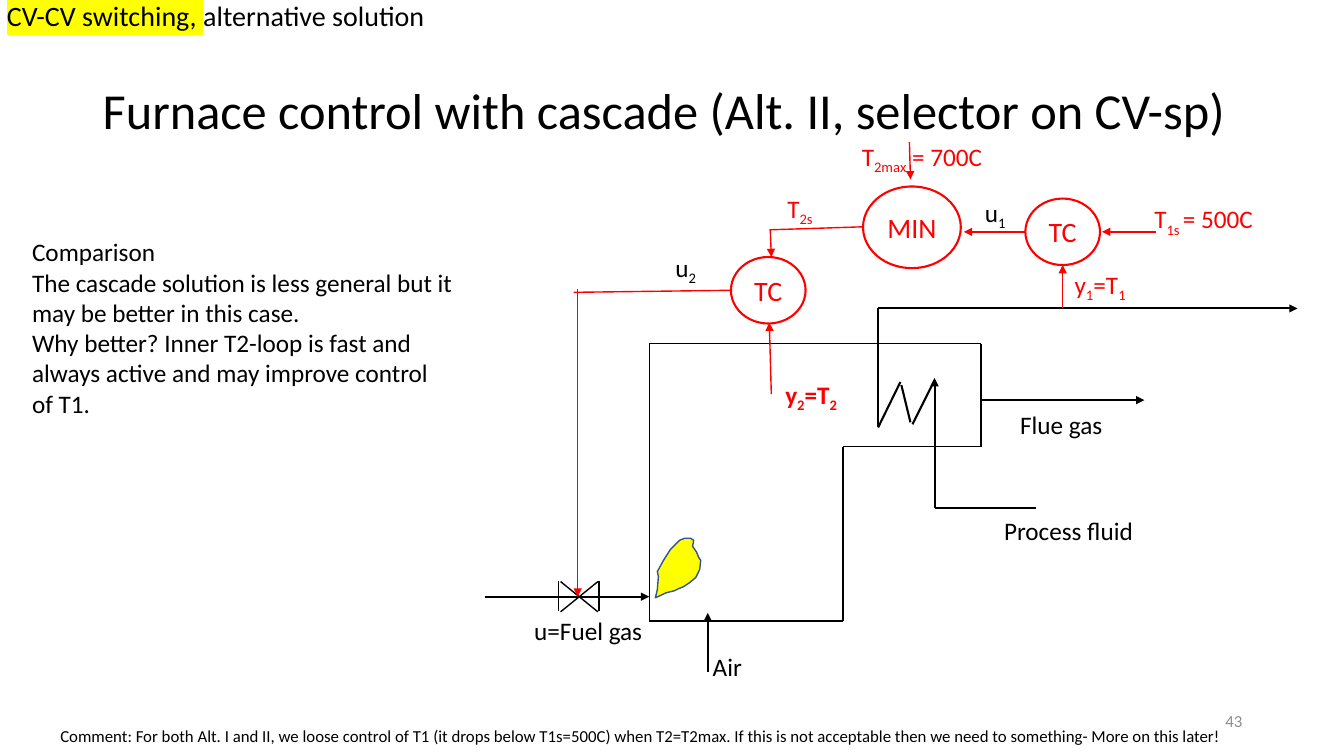
from lxml import etree
from pptx import Presentation
from pptx.dml.color import RGBColor
from pptx.enum.shapes import MSO_CONNECTOR, MSO_SHAPE
from pptx.enum.text import MSO_ANCHOR as ANCHOR, PP_ALIGN as ALIGN
from pptx.oxml.ns import qn
from pptx.util import Inches, Pt

BLACK = RGBColor(0x00, 0x00, 0x00)
WHITE = RGBColor(0xFF, 0xFF, 0xFF)
RED = RGBColor(0xFF, 0x00, 0x00)
GREY = RGBColor(0x8C, 0x8C, 0x8C)
YELLOW = RGBColor(0xFF, 0xFF, 0x00)
FLAME_EDGE = RGBColor(0x32, 0x54, 0x91)

FURNACE = [
    (6.44, 3.41, 9.73, 3.41), (9.73, 3.41, 9.73, 4.43), (8.36, 4.43, 9.73, 4.43),
    (8.36, 4.43, 8.36, 6.16), (6.44, 6.16, 8.36, 6.16), (6.44, 3.41, 6.44, 6.16),
]
VALVE = [
    (5.56, 5.77, 5.93, 6.07), (5.93, 5.77, 5.56, 6.07),
    (5.94, 5.76, 5.94, 6.06), (5.54, 5.76, 5.54, 6.06),
]
COIL = [
    (9.27, 5.04, 10.28, 5.04), (8.71, 4.24, 8.71, 3.06), (9.05, 4.21, 9.27, 3.77),
    (9.03, 4.19, 8.94, 3.82), (8.71, 4.24, 8.93, 3.79),
]
FLOWS = [
    (4.81, 5.92, 6.44, 5.92), (9.73, 3.97, 11.35, 3.97), (9.27, 5.04, 9.27, 3.75),
    (8.71, 3.06, 12.87, 3.06), (7.02, 6.67, 7.02, 6.08),
]
SIGNALS = [(5.69, 2.9, 7.25, 2.88), (7.63, 2.28, 8.56, 2.25)]
SIGNAL_ARROWS = [
    (10.54, 3.06, 10.54, 2.63), (5.73, 2.87, 5.73, 5.92), (11.47, 2.3, 10.93, 2.3),
    (7.65, 3.91, 7.63, 3.2), (7.64, 2.28, 7.65, 2.55), (9.02, 1.41, 9.03, 1.78),
    (10.17, 2.3, 9.56, 2.3),
]
CONTROLLERS = [
    ("TC", 10.17, 1.97, 0.74, 0.66), ("TC", 7.25, 2.55, 0.74, 0.66),
    ("MIN", 8.56, 1.85, 0.97, 0.81),
]
FLAME = [
    (6.5, 5.93), (6.61, 5.88), (6.69, 5.86), (6.73, 5.84), (6.78, 5.82), (6.84, 5.78),
    (6.9, 5.73), (6.94, 5.65), (6.95, 5.56), (6.93, 5.53), (6.91, 5.48), (6.89, 5.45),
    (6.87, 5.42), (6.88, 5.36), (6.85, 5.34), (6.79, 5.34), (6.74, 5.36), (6.65, 5.45),
    (6.58, 5.56), (6.52, 5.67), (6.53, 5.72), (6.52, 5.85),
]
LABELS = [
    (["u=Fuel gas"], 5.2, 6.06, 1.29, BLACK, False),
    (["Flue gas"], 10.02, 4.01, 1.03, BLACK, False),
    (["Process fluid"], 9.86, 5.06, 1.5, BLACK, False),
    (["Air"], 6.97, 6.41, 0.49, BLACK, False),
    (["u", "1"], 9.67, 1.91, 0.42, BLACK, False),
    (["u", "2"], 6.6, 2.45, 0.42, BLACK, False),
    (["T", "1s ", "= 500C"], 11.35, 1.97, 1.22, RED, False),
    (["T", "2max", " = 700C"], 8.45, 1.35, 1.46, RED, False),
    (["T", "2s"], 7.71, 1.87, 0.48, RED, False),
    (["y", "1", "=T", "1"], 10.56, 2.62, 0.74, RED, False),
    (["y", "2", "=T", "2"], 7.69, 3.71, 0.74, RED, True),
]


class Diagram:
    """Draws the elements of a control diagram on one slide in a shared style."""

    def __init__(self, slide, font="Calibri"):
        self.shapes = slide.shapes
        self.font = font

    def style(self, r, size, color, bold=False):
        r.font.name, r.font.size, r.font.bold = self.font, Pt(size), bold
        r.font.color.rgb = color

    def text(self, text, x, y, w, h, size, color=BLACK, wrap=False,
             anchor=ANCHOR.TOP, align=ALIGN.LEFT, spacing=None):
        tf = self.shapes.add_textbox(Inches(x), Inches(y), Inches(w), Inches(h)).text_frame
        tf.word_wrap, tf.vertical_anchor = wrap, anchor
        tf.text = text
        for p in tf.paragraphs:
            p.alignment, p.line_spacing = align, spacing
            for r in p.runs:
                self.style(r, size, color)
        return tf

    def label(self, parts, x, y, w, color, bold):
        p = self.text("", x, y, w, 0.4, 18).paragraphs[0]
        for i, part in enumerate(parts):
            r = p.add_run()
            r.text = part
            self.style(r, 18, color, bold)
            if i % 2:
                r._r.get_or_add_rPr().set("baseline", "-25000")

    def tag(self, marked, rest, x, y, w, h):
        p = self.text(marked, x, y, w, h, 20).paragraphs[0]
        fill = p.runs[0]._r.get_or_add_rPr().find(qn("a:solidFill"))
        highlight = etree.Element(qn("a:highlight"))
        etree.SubElement(highlight, qn("a:srgbClr"), val=str(YELLOW))
        fill.addnext(highlight)
        r = p.add_run()
        r.text = rest
        self.style(r, 20, BLACK)

    def lines(self, segments, color, width, arrow=False):
        for segment in segments:
            c = self.shapes.add_connector(MSO_CONNECTOR.STRAIGHT, *map(Inches, segment))
            c.line.color.rgb, c.line.width = color, Pt(width)
            if arrow:
                etree.SubElement(c.line._get_or_add_ln(), qn("a:tailEnd"), type="triangle")
            etree.SubElement(c._element.spPr, qn("a:effectLst"))

    def outline(self, sp, fill, line, width):
        sp.shadow.inherit = False
        sp.fill.solid()
        sp.fill.fore_color.rgb = fill
        sp.line.color.rgb, sp.line.width = line, Pt(width)

    def controller(self, name, x, y, w, h):
        sp = self.shapes.add_shape(MSO_SHAPE.FLOWCHART_CONNECTOR,
                                   Inches(x), Inches(y), Inches(w), Inches(h))
        self.outline(sp, WHITE, RED, 1.5)
        tf = sp.text_frame
        tf.word_wrap, tf.vertical_anchor = False, ANCHOR.MIDDLE
        tf.text = name
        p = tf.paragraphs[0]
        p.alignment = ALIGN.CENTER
        self.style(p.runs[0], 20, RED)

    def flame(self, points):
        start, *rest = [(Inches(x), Inches(y)) for x, y in points]
        builder = self.shapes.build_freeform(*start)
        builder.add_line_segments(rest, close=True)
        self.outline(builder.convert_to_shape(), YELLOW, FLAME_EDGE, 1)


def main():
    prs = Presentation()
    prs.slide_width, prs.slide_height = Inches(13.33), Inches(7.5)
    s = prs.slides.add_slide(prs.slide_layouts[6])
    d = Diagram(s)
    d.text("Furnace control with cascade (Alt. II, selector on CV-sp)",
           0.92, 0.4, 11.5, 1.45, 36, wrap=True, anchor=ANCHOR.MIDDLE, spacing=0.9)
    d.lines(FURNACE + VALVE, BLACK, 1)
    d.flame(FLAME)
    d.lines(COIL, BLACK, 1.5)
    d.lines(FLOWS, BLACK, 1.5, arrow=True)
    d.lines(SIGNALS, RED, 1)
    d.lines(SIGNAL_ARROWS, RED, 1, arrow=True)
    for controller in CONTROLLERS:
        d.controller(*controller)
    for label in LABELS:
        d.label(*label)
    d.tag("CV-CV switching, ", "alternative solution", -0.03, -0.06, 4.4, 0.44)
    d.text("Comparison\n"
           "The cascade solution is less general but it may be better in this case.\n"
           "Why better? Inner T2-loop is fast and always active and may improve control of T1.",
           0.22, 2.3, 4.37, 2.83, 18, wrap=True)
    d.text("Comment: For both Alt. I and II, we loose control of T1 (it drops below T1s=500C) "
           "when T2=T2max. If this is not acceptable then we need to something- "
           "More on this later!", 0.5, 7.15, 11.84, 0.3, 12)
    d.text("43", 9.42, 6.95, 3, 0.4, 12, GREY, wrap=True,
           anchor=ANCHOR.MIDDLE, align=ALIGN.RIGHT)
    prs.save("out.pptx")


if __name__ == "__main__":
    main()
